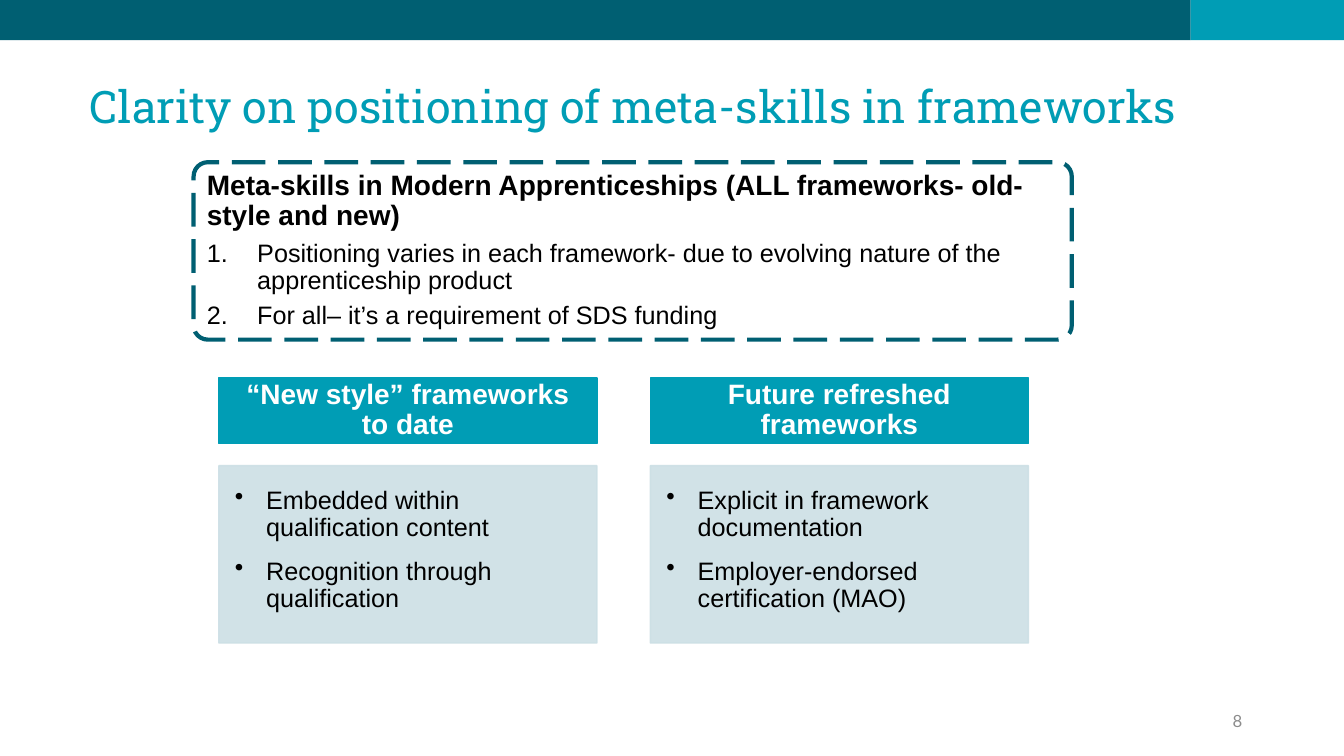
from dataclasses import dataclass

from lxml.etree import SubElement
from pptx import Presentation
from pptx.dml.color import RGBColor
from pptx.enum.dml import MSO_LINE
from pptx.enum.shapes import MSO_SHAPE
from pptx.enum.text import MSO_ANCHOR, PP_ALIGN
from pptx.oxml.ns import qn
from pptx.util import Emu, Pt

PX = 9144  # EMU in one px, 100 px to the inch


@dataclass(frozen=True)
class Theme:
    dark: str = "005F72"
    teal: str = "009DB5"
    pale: str = "CCDFE5"
    grey: str = "8C8C8C"
    black: str = "000000"
    white: str = "FFFFFF"
    title_font: str = "Roboto Slab"
    body_font: str = "Arial"
    number_font: str = "Lato"
    title_size: int = 32
    heading_size: int = 20
    body_size: int = 18
    number_size: int = 12


THEME = Theme()
HEADING = {"size": Pt(THEME.heading_size), "bold": True}
BODY = {"size": Pt(THEME.body_size), "bold": False}

COLUMNS = [
    ("“New style” frameworks to date",
     ["Embedded within qualification content", "Recognition through qualification"]),
    ("Future refreshed frameworks",
     ["Explicit in framework documentation", "Employer‑endorsed certification (MAO)"]),
]


def px(length):
    return Emu(length * PX)


def set_all(target, values):
    for name, value in values.items():
        setattr(target, name, value)


def set_frame(shape, insets, anchor=MSO_ANCHOR.MIDDLE):
    sides = ("margin_left", "margin_top", "margin_right", "margin_bottom")
    set_all(shape.text_frame, {"word_wrap": True, "vertical_anchor": anchor,
                               **dict(zip(sides, map(px, insets)))})


def add_box(page, box, kind=MSO_SHAPE.RECTANGLE, fill=None, line=None, weight=1, opacity=100):
    shape = page.shapes.add_shape(kind, *map(px, box))
    shape.shadow.inherit = False
    for paint, color in ((shape.fill, fill), (shape.line.fill, line)):
        if color is None:
            paint.background()
            continue
        paint.solid()
        paint.fore_color.rgb = RGBColor.from_string(color)
    if line:
        shape.line.width = Pt(weight)
    if opacity < 100:
        for color in shape._element.spPr.iter(qn("a:srgbClr")):
            SubElement(color, qn("a:alpha"), val=str(opacity * 1000))
    return shape


def write(shape, text, font, color=THEME.black, face=THEME.body_font,
          after=0, align=PP_ALIGN.LEFT, spacing=0.9, marker=None, indent=0):
    """Add one paragraph, using the empty first one when it is free."""
    frame = shape.text_frame
    para = frame.paragraphs[0] if not frame.text else frame.add_paragraph()
    set_all(para, {"alignment": align, "line_spacing": spacing, "space_after": Pt(after)})
    if marker:
        tag, attributes = marker
        settings = para._p.get_or_add_pPr()
        settings.set("marL", str(px(indent)))
        settings.set("indent", str(-px(indent)))
        SubElement(settings, qn(tag), **attributes)
    span = para.add_run()
    span.text = text
    set_all(span.font, {"name": face, **font})
    span.font.color.rgb = RGBColor.from_string(color)


def add_top_band(page, box, accent_width):
    left, top, width, height = box
    main_width = width - accent_width
    add_box(page, (left, top, main_width, height), fill=THEME.dark)
    add_box(page, (left + main_width, top, accent_width, height), fill=THEME.teal)


def add_title(page, box):
    title = page.shapes.add_textbox(*map(px, box))
    set_frame(title, (10, 5, 10, 5), MSO_ANCHOR.TOP)
    write(title, "Clarity on positioning of meta-skills in frameworks",
          {"size": Pt(THEME.title_size)}, THEME.teal, THEME.title_font)


def add_page_number(page, box):
    number = page.shapes.add_textbox(*map(px, box))
    set_frame(number, (10, 5, 10, 5))
    write(number, "8", {"size": Pt(THEME.number_size)}, THEME.grey, THEME.number_font,
          align=PP_ALIGN.RIGHT, spacing=1.0)


def add_summary(page, box):
    panel = add_box(page, box, MSO_SHAPE.ROUNDED_RECTANGLE, line=THEME.dark, weight=3)
    panel.adjustments[0] = 0.08
    panel.line.dash_style = MSO_LINE.LONG_DASH
    set_frame(panel, (9, 9, 9, 9))
    write(panel, "Meta‑skills in Modern Apprenticeships (ALL frameworks- old-style and new)",
          HEADING, after=6)
    for text in (
        "Positioning varies in each framework- due to evolving nature of the apprenticeship product",
        "For all– it’s a requirement of SDS funding",
    ):
        write(panel, text, BODY, after=6, indent=50,
              marker=("a:buAutoNum", {"type": "arabicPeriod"}))


def add_column(page, box, heading, points):
    left, top, width, height = box
    heading_height, gap = 65, 22

    # Heading bar
    bar = add_box(page, (left, top, width, heading_height), fill=THEME.teal, line=THEME.teal)
    set_frame(bar, (22, 12, 22, 12))
    write(bar, heading, HEADING, THEME.white, after=6, align=PP_ALIGN.CENTER)

    # Bulleted panel
    offset = heading_height + gap
    panel = add_box(page, (left, top + offset, width, height - offset),
                    fill=THEME.pale, line=THEME.pale, opacity=90)
    set_frame(panel, (16, 16, 22, 24))
    for point in points:
        write(panel, point, BODY, after=12, indent=31, marker=("a:buChar", {"char": "•"}))


def add_columns(page, box, gap):
    left, top, width, height = box
    column_width = (width - gap * (len(COLUMNS) - 1)) // len(COLUMNS)
    for index, (heading, points) in enumerate(COLUMNS):
        column_left = left + index * (column_width + gap)
        add_column(page, (column_left, top, column_width, height), heading, points)


def main():
    deck = Presentation()
    set_all(deck, {"slide_width": px(1333), "slide_height": px(750)})
    page = deck.slides.add_slide(deck.slide_layouts[6])
    add_top_band(page, (0, 0, 1333, 40), accent_width=152)
    add_page_number(page, (942, 695, 300, 40))
    add_summary(page, (192, 161, 871, 176))
    add_columns(page, (217, 375, 803, 263), gap=53)
    add_title(page, (79, 79, 1176, 74))
    deck.save("out.pptx")


if __name__ == "__main__":
    main()
